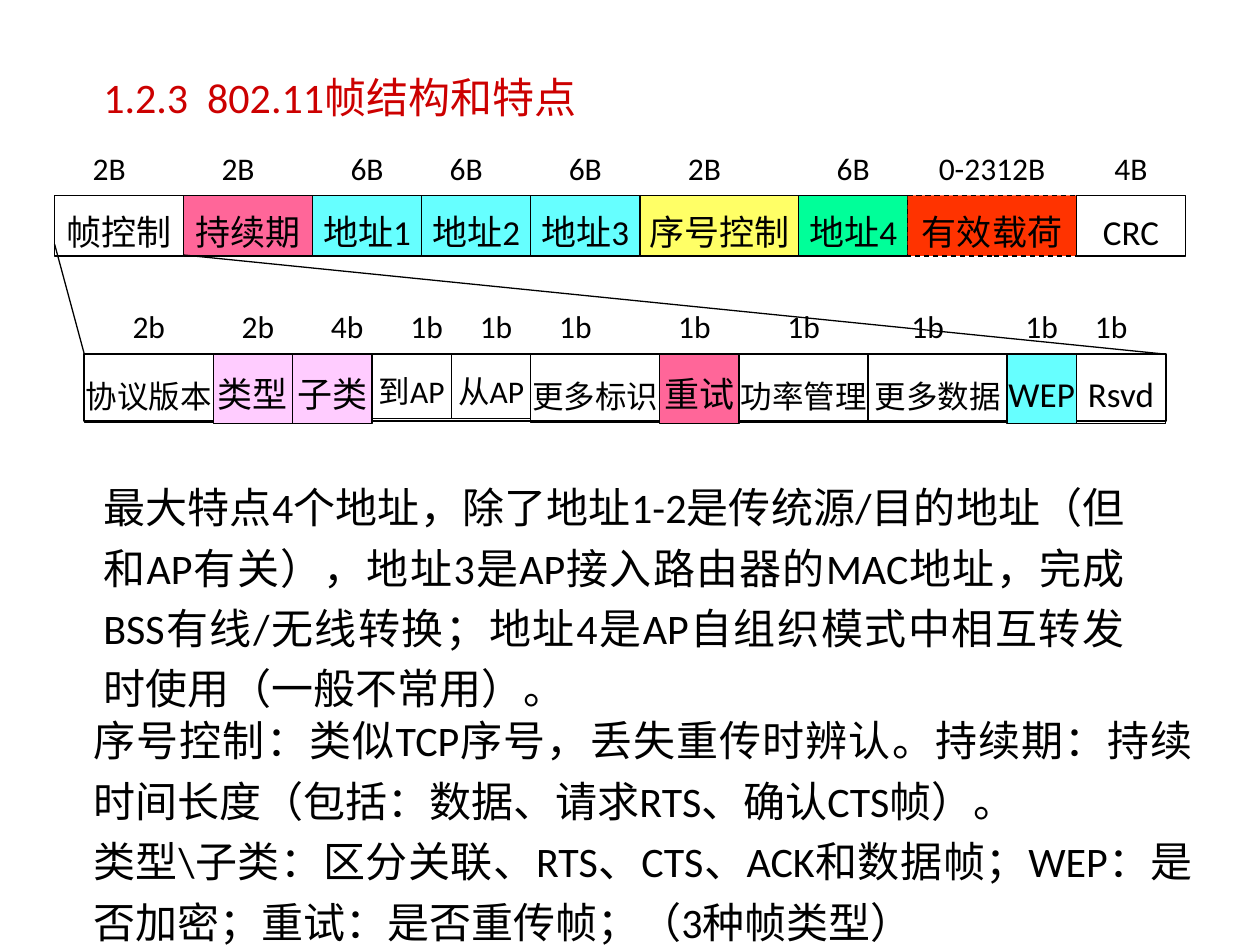
from dataclasses import dataclass
from typing import Optional

import pptx
import pptx.dml.color
import pptx.enum.dml
import pptx.enum.shapes
import pptx.enum.text
import pptx.oxml.ns
import pptx.presentation
import pptx.shapes.base
import pptx.slide
import pptx.util

RGBColor = pptx.dml.color.RGBColor
Align = pptx.enum.text.PP_ALIGN

BLACK = RGBColor(0x00, 0x00, 0x00)
WHITE = RGBColor(0xFF, 0xFF, 0xFF)
RED = RGBColor(0xCC, 0x00, 0x00)
ORANGE = RGBColor(0xFF, 0x33, 0x00)
PINK = RGBColor(0xFF, 0x66, 0x99)
LILAC = RGBColor(0xFF, 0xCC, 0xFF)
CYAN = RGBColor(0x66, 0xFF, 0xFF)
YELLOW = RGBColor(0xFF, 0xFF, 0x66)
GREEN = RGBColor(0x00, 0xFF, 0x99)

FONT = "Calibri"
SLIDE_WIDTH, SLIDE_HEIGHT = 10, 7.5
UNIT = SLIDE_WIDTH / 127  # one square of the grid
MARGIN = 0.5  # the first column starts half a square in
LABEL_HEIGHT = 5.6


@dataclass(frozen=True)
class CellStyle:
    height: float  # rows
    size: int
    insets: tuple[float, float, float, float]  # left, top, right, bottom in inches
    wrap: bool = False


FRAME = CellStyle(6.1, 20, (0.06, 0.05, 0.06, 0.05), wrap=True)
LARGE = CellStyle(7, 20, (0, 0.08, 0, 0.09))
SMALL = CellStyle(6.9, 18, (0, 0.12, 0, 0.09))
SHORT = CellStyle(6.5, 18, (0, 0.08, 0, 0.09))


@dataclass(frozen=True)
class Field:
    name: str
    columns: int
    length: str
    label_column: int
    style: CellStyle = FRAME
    fill: Optional[RGBColor] = None
    label_columns: int = 7
    dashed: bool = False


@dataclass(frozen=True)
class FieldRow:
    column: int
    row: float
    label_row: float
    fields: tuple[Field, ...]

    @property
    def columns(self) -> int:
        return sum(field.columns for field in self.fields)


@dataclass(frozen=True)
class TextBlock:
    column: int
    row: float
    columns: float
    rows: float
    paragraphs: tuple[str, ...]
    color: RGBColor = BLACK
    alignment: Optional[Align] = Align.JUSTIFY


FRAME_ROW = FieldRow(5, 19.7, 13.6, (
    Field("帧控制", 13, "2B", 7),
    Field("持续期", 13, "2B", 20, fill=PINK),
    Field("地址1", 11, "6B", 33, fill=CYAN),
    Field("地址2", 11, "6B", 43, fill=CYAN),
    Field("地址3", 11, "6B", 55, fill=CYAN),
    Field("序号控制", 16, "2B", 67, fill=YELLOW),
    Field("地址4", 11, "6B", 82, fill=GREEN),
    Field("有效载荷", 17, "0-2312B", 92, fill=ORANGE, label_columns=15, dashed=True),
    Field("CRC", 11, "4B", 110),
))
CONTROL_ROW = FieldRow(8, 35.7, 29.6, (
    Field("协议版本", 13, "2b", 11, SMALL),
    Field("类型", 8, "2b", 22, LARGE, LILAC),
    Field("子类", 8, "4b", 31, LARGE, LILAC),
    Field("到AP", 8, "1b", 39, SHORT),
    Field("从AP", 8, "1b", 46, SHORT),
    Field("更多标识", 13, "1b", 54, SMALL),
    Field("重试", 8, "1b", 66, LARGE, PINK),
    Field("功率管理", 13, "1b", 77, SMALL),
    Field("更多数据", 14, "1b", 89, SMALL, label_columns=8),
    Field("WEP", 7, "1b", 101, LARGE, CYAN),
    Field("Rsvd", 9, "1b", 108, LARGE),
))
TEXT_BLOCKS = (
    TextBlock(6, 5.6, 66.7, 6.4, ("1.2.3  802.11帧结构和特点",), RED, None),
    TextBlock(6, 46.9, 108.1, 22, (
        "最大特点4个地址，除了地址1-2是传统源/目的地址（但和AP有关），地址3是AP接入路由器的MAC地址，"
        "完成BSS有线/无线转换；地址4是AP自组织模式中相互转发时使用（一般不常用）。",
    )),
    TextBlock(5, 70.4, 116, 23, (
        "序号控制：类似TCP序号，丢失重传时辨认。持续期：持续时间长度（包括：数据、请求RTS、确认CTS帧）。",
        "类型\\子类：区分关联、RTS、CTS、ACK和数据帧；WEP：是否加密；重试：是否重传帧；（3种帧类型）",
    )),
)


def squares(count: float) -> pptx.util.Length:
    return pptx.util.Inches(count * UNIT)


def place(column: float, row: float) -> tuple[pptx.util.Length, pptx.util.Length]:
    return squares(column + MARGIN), squares(row)


def write(shape: pptx.shapes.base.BaseShape, paragraphs: tuple[str, ...], size: int,
          color: RGBColor = BLACK, alignment: Optional[Align] = Align.CENTER,
          wrap: bool = True, indented: bool = False) -> None:
    frame = shape.text_frame
    frame.word_wrap = wrap
    frame.auto_size = pptx.enum.text.MSO_AUTO_SIZE.NONE
    frame.vertical_anchor = pptx.enum.text.MSO_ANCHOR.TOP
    for index, text in enumerate(paragraphs):
        paragraph = frame.add_paragraph() if index else frame.paragraphs[0]
        paragraph.alignment = alignment
        paragraph.line_spacing = 1.2
        if indented:
            paragraph.level = 1
            properties = paragraph._p.get_or_add_pPr()
            properties.set("marL", str(pptx.util.Inches(0.21)))
            properties.set("indent", "0")
        run = paragraph.add_run()
        run.text = text
        run.font.name = FONT
        run.font.size = pptx.util.Pt(size)
        run.font.color.rgb = color


def add_box(slide: pptx.slide.Slide, column: float, row: float, columns: float, rows: float,
            fill: Optional[RGBColor], line_width: float = 0.75) -> pptx.shapes.base.BaseShape:
    box = slide.shapes.add_shape(pptx.enum.shapes.MSO_SHAPE.RECTANGLE,
                                 *place(column, row), squares(columns), squares(rows))
    box.shadow.inherit = False
    if fill is None:
        box.fill.background()
    else:
        box.fill.solid()
        box.fill.fore_color.rgb = fill
    box.line.color.rgb = BLACK
    box.line.width = pptx.util.Pt(line_width)
    return box


def add_field_row(slide: pptx.slide.Slide, field_row: FieldRow) -> None:
    column = field_row.column
    for field in field_row.fields:
        style = field.style
        cell = add_box(slide, column, field_row.row, field.columns, style.height, field.fill)
        if field.dashed:
            cell.line.dash_style = pptx.enum.dml.MSO_LINE.DASH
        frame = cell.text_frame
        (frame.margin_left, frame.margin_top, frame.margin_right,
         frame.margin_bottom) = map(pptx.util.Inches, style.insets)
        write(cell, (field.name,), style.size, wrap=style.wrap)
        label = slide.shapes.add_textbox(*place(field.label_column, field_row.label_row),
                                         squares(field.label_columns), squares(LABEL_HEIGHT))
        write(label, (field.length,), 18)
        column += field.columns


def add_line(slide: pptx.slide.Slide, start: tuple[float, float],
             end: tuple[float, float]) -> None:
    line = slide.shapes.add_connector(pptx.enum.shapes.MSO_CONNECTOR.STRAIGHT,
                                      *place(*start), *place(*end))
    line.line.color.rgb = BLACK
    line.line.width = pptx.util.Pt(0.75)
    properties = line._element.spPr
    properties.append(properties.makeelement(pptx.oxml.ns.qn("a:effectLst"), {}))


def add_text_block(slide: pptx.slide.Slide, block: TextBlock) -> None:
    box = slide.shapes.add_textbox(*place(block.column, block.row),
                                   squares(block.columns), squares(block.rows))
    write(box, block.paragraphs, 24, block.color, block.alignment, indented=True)


def main() -> None:
    presentation = pptx.Presentation()
    presentation.slide_width = pptx.util.Inches(SLIDE_WIDTH)
    presentation.slide_height = pptx.util.Inches(SLIDE_HEIGHT)
    slide = presentation.slides.add_slide(presentation.slide_layouts[6])
    first, last = CONTROL_ROW.column, CONTROL_ROW.column + CONTROL_ROW.columns
    add_box(slide, first, CONTROL_ROW.row, CONTROL_ROW.columns, 6.75, WHITE, 1)
    add_field_row(slide, FRAME_ROW)
    add_field_row(slide, CONTROL_ROW)
    add_line(slide, (FRAME_ROW.column, 24.6), (first, CONTROL_ROW.row))
    add_line(slide, (FRAME_ROW.column + 13, 25.7), (last, CONTROL_ROW.row))
    for block in TEXT_BLOCKS:
        add_text_block(slide, block)
    presentation.save("out.pptx")


if __name__ == "__main__":
    main()
